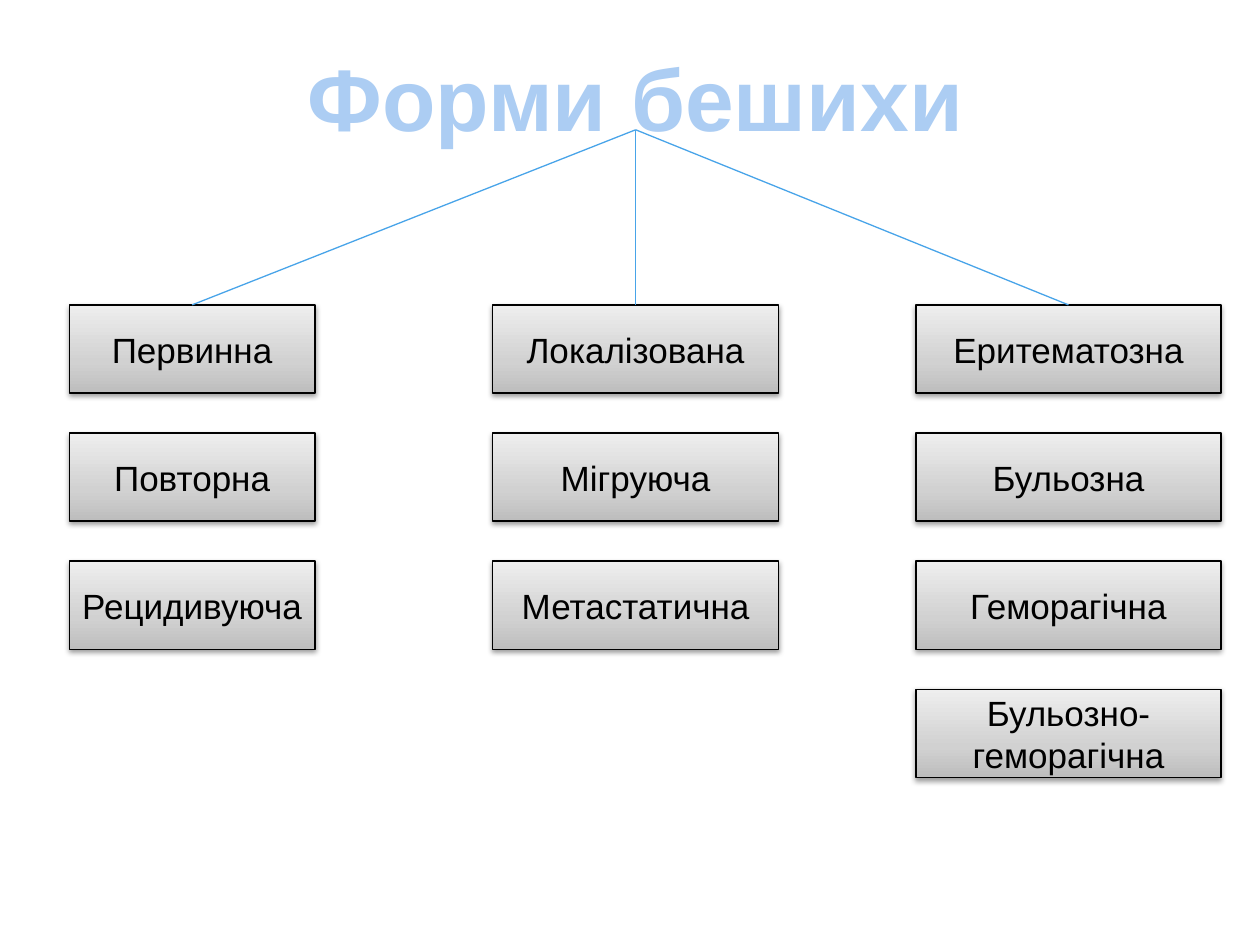
from typing import NamedTuple

from lxml.etree import SubElement
from pptx import Presentation
from pptx.dml.color import RGBColor
from pptx.enum.shapes import MSO_CONNECTOR, MSO_SHAPE
from pptx.enum.text import MSO_ANCHOR, MSO_AUTO_SIZE, PP_ALIGN
from pptx.oxml import parse_xml
from pptx.oxml.ns import nsdecls, qn
from pptx.util import Inches, Pt

COLORS = {
    "title": "ACCDF3",
    "text": "000000",
    "border": "000000",
    "branch": "48A4E9",
    "bottom": "BDBDBD",
    "middle": "D1D1D1",
    "top": "EEEEEE",
}
FONT = "Arial"
FIRST_ROW, LAST_ROW = 2.42, 5.47
ROW_PITCH = (LAST_ROW - FIRST_ROW) / 3
BOX_HEIGHT = 0.7


class Column(NamedTuple):
    left: float
    width: float
    forms: tuple[str, ...]


COLUMNS = (
    Column(0.55, 1.95, ("Первинна", "Повторна", "Рецидивуюча")),
    Column(3.91, 2.27, ("Локалізована", "Мігруюча", "Метастатична")),
    Column(7.27, 2.42, ("Еритематозна", "Бульозна", "Геморагічна", "Бульозно-геморагічна")),
)


def rgb(name: str) -> RGBColor:
    return RGBColor.from_string(COLORS[name])


def set_text(shape, text: str, size: float, color: str, bold: bool = False) -> None:
    text_frame = shape.text_frame
    text_frame.text = text
    text_frame.word_wrap = True
    text_frame.auto_size = MSO_AUTO_SIZE.NONE
    text_frame.vertical_anchor = MSO_ANCHOR.MIDDLE
    paragraph = text_frame.paragraphs[0]
    paragraph.alignment = PP_ALIGN.CENTER
    font = paragraph.runs[0].font
    font.name, font.size, font.bold = FONT, Pt(size), bold
    font.color.rgb = rgb(color)


def set_gradient(shape) -> None:
    stops = "".join(
        f'<a:gs pos="{position * 1000}"><a:srgbClr val="{COLORS[name]}"/></a:gs>'
        for position, name in ((0, "bottom"), (35, "middle"), (100, "top"))
    )
    gradient = parse_xml(
        f'<a:gradFill {nsdecls("a")} rotWithShape="1"><a:gsLst>{stops}</a:gsLst>'
        '<a:lin ang="16200000" scaled="1"/></a:gradFill>'
    )
    shape.element.spPr.find(qn("a:prstGeom")).addnext(gradient)


def add_shadow(shape) -> None:
    shape.element.spPr.append(parse_xml(
        f'<a:effectLst {nsdecls("a")}><a:outerShdw blurRad="{Pt(3.1)}" dist="{Pt(1.6)}" '
        f'dir="5400000" rotWithShape="0"><a:srgbClr val="{COLORS["border"]}">'
        '<a:alpha val="38000"/></a:srgbClr></a:outerShdw></a:effectLst>'
    ))


def add_box(slide, column: Column, row: int):
    shape = slide.shapes.add_shape(
        MSO_SHAPE.RECTANGLE,
        Inches(column.left), Inches(FIRST_ROW + row * ROW_PITCH),
        Inches(column.width), Inches(BOX_HEIGHT),
    )
    set_gradient(shape)
    shape.line.color.rgb = rgb("border")
    shape.line.width = Pt(0.75)
    add_shadow(shape)
    set_text(shape, column.forms[row], 20, "text")
    return shape


def add_branch(slide, title, box) -> None:
    connector = slide.shapes.add_connector(MSO_CONNECTOR.STRAIGHT, 0, 0, 0, 0)
    connector.begin_connect(title, 2)
    connector.end_connect(box, 0)
    connector.line.color.rgb = rgb("branch")
    connector.line.width = Pt(0.75)
    SubElement(connector.element.spPr, qn("a:effectLst"))


def main() -> None:
    presentation = Presentation()
    presentation.slide_width, presentation.slide_height = Inches(10), Inches(7.5)
    slide = presentation.slides.add_slide(presentation.slide_layouts[5])

    title = slide.shapes.title
    title.left, title.top = Inches(1.17), Inches(0.5)
    title.width, title.height = Inches(7.75), Inches(0.53)
    set_text(title, "Форми бешихи", 50, "title", bold=True)

    boxes = [[add_box(slide, column, row) for row in range(len(column.forms))] for column in COLUMNS]
    for column_boxes in boxes:
        add_branch(slide, title, column_boxes[0])

    presentation.save("out.pptx")


if __name__ == "__main__":
    main()
